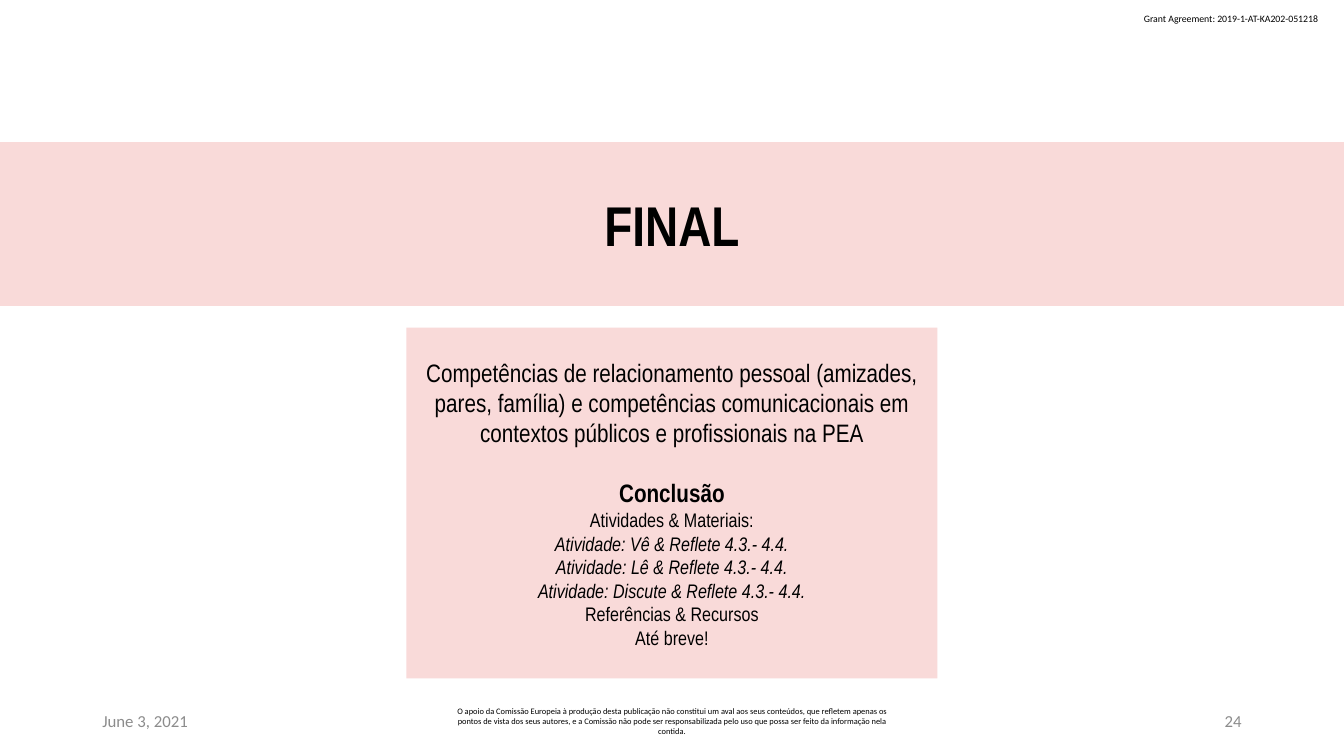
from pptx import Presentation
from pptx.dml.color import RGBColor
from pptx.enum.shapes import MSO_SHAPE
from pptx.enum.text import MSO_ANCHOR as ANCHOR, MSO_AUTO_SIZE as AUTO, PP_ALIGN as ALIGN
from pptx.util import Pt

PINK, BLACK, GREY = "F9DAD9", "000000", "8C8C8C"
NARROW, SANS = "Arial Narrow", "Calibri"
FOOTER_TOP, FOOTER_HEIGHT = 500.5, 28.8
DISCLAIMER = (
    "O apoio da Comissão Europeia à produção desta publicação não constitui um aval "
    "aos seus conteúdos, que refletem apenas os pontos de vista dos seus autores, e a "
    "Comissão não pode ser responsabilizada pelo uso que possa ser feito da informação "
    "nela contida."
)
TOPIC = (
    "Competências de relacionamento pessoal (amizades, pares, família) e competências "
    "comunicacionais em contextos públicos e profissionais na PEA"
)
CONCLUSION = [
    (TOPIC, 18, {}),
    ("Conclusão", 18, {"bold": True, "before": 21.5}),
    ("Atividades & Materiais:", 14, {}),
    ("Atividade: Vê & Reflete 4.3.- 4.4.", 14, {"italic": True}),
    ("Atividade: Lê & Reflete 4.3.- 4.4.", 14, {"italic": True}),
    ("Atividade: Discute & Reflete 4.3.- 4.4.", 14, {"italic": True}),
    ("Referências & Recursos", 14, {}),
    ("Até breve!", 14, {}),
]


def rgb(value):
    return RGBColor.from_string(value)


def style(p, text, font, size, color=BLACK, align=ALIGN.CENTER,
          bold=False, italic=False, before=0):
    p.text = text
    p.alignment = align
    p.space_before = Pt(before)
    f = p.font
    f.name, f.size, f.bold, f.italic = font, Pt(size), bold, italic
    f.color.rgb = rgb(color)


def add_label(slide, box, text, size, color=BLACK, align=ALIGN.LEFT,
              anchor=ANCHOR.MIDDLE, wrap=True):
    tf = slide.shapes.add_textbox(*map(Pt, box)).text_frame
    tf.word_wrap = wrap
    tf.vertical_anchor = anchor
    style(tf.paragraphs[0], text, SANS, size, color, align)


def make_panel(sp):
    sp.fill.solid()
    sp.fill.fore_color.rgb = rgb(PINK)
    sp.line.fill.background()
    tf = sp.text_frame
    tf.word_wrap = True
    tf.auto_size = AUTO.NONE
    tf.vertical_anchor = ANCHOR.MIDDLE
    tf.margin_left = tf.margin_right = Pt(9.6)
    tf.margin_top = tf.margin_bottom = Pt(4.8)
    return tf


def add_title_band(slide, box, text):
    title = slide.shapes.title
    title.left, title.top, title.width, title.height = map(Pt, box)
    tf = make_panel(title)
    style(tf.paragraphs[0], text, NARROW, 40, bold=True)


def add_text_panel(slide, box, lines):
    sp = slide.shapes.add_shape(MSO_SHAPE.RECTANGLE, *map(Pt, box))
    sp.shadow.inherit = False
    tf = make_panel(sp)
    for i, (text, size, look) in enumerate(lines):
        p = tf.add_paragraph() if i else tf.paragraphs[0]
        style(p, text, NARROW, size, **look)


def main():
    """Build the closing slide and save it."""
    prs = Presentation()
    prs.slide_width, prs.slide_height = Pt(960), Pt(540)
    slide = prs.slides.add_slide(prs.slide_layouts[5])
    add_title_band(slide, (0, 101.5, 960, 117), "FINAL")
    add_text_panel(slide, (290.3, 234, 379.4, 250.6), CONCLUSION)
    add_label(slide, (810, 5.5, 142, 16), "Grant Agreement: 2019-1-AT-KA202-051218", 7,
              anchor=ANCHOR.TOP, wrap=False)
    for left, width, text, size, color, align in [
        (66, 216, "June 3, 2021", 12, GREY, ALIGN.LEFT),
        (318, 324, DISCLAIMER, 6, BLACK, ALIGN.CENTER),
        (678, 216, "24", 12, GREY, ALIGN.RIGHT),
    ]:
        add_label(slide, (left, FOOTER_TOP, width, FOOTER_HEIGHT), text, size, color, align)
    prs.save("out.pptx")


if __name__ == "__main__":
    main()
